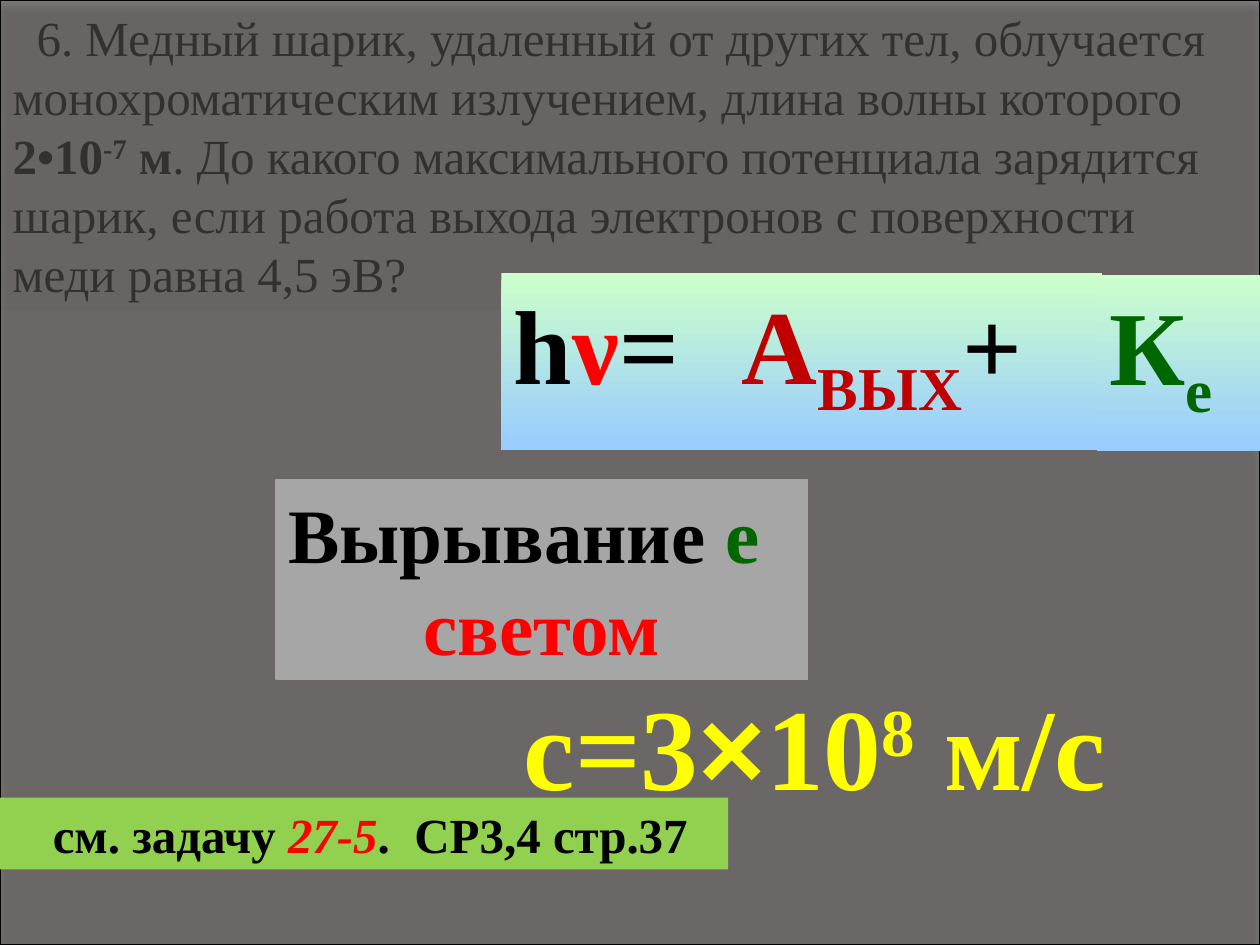
from dataclasses import dataclass

from pptx import Presentation
from pptx import util as u
from pptx.dml.color import RGBColor
from pptx.enum import shapes, text
from pptx.oxml import parse_xml
from pptx.oxml.ns import nsdecls, qn
from lxml import etree

COLORS = {
    "black": "000000", "red": "FF0000", "dark_red": "C00000",
    "green": "006600", "yellow": "FFFF00", "problem": "F2F2F2",
    "veil": "404040", "shadow": "4E3B30", "gray": "A6A6A6",
    "lime": "92D050", "mint": "CCFFCC", "sky": "99CCFF",
}
FONT = "Times New Roman"
LEFT, CENTER = text.PP_ALIGN.LEFT, text.PP_ALIGN.CENTER
TOP, MIDDLE = text.MSO_ANCHOR.TOP, text.MSO_ANCHOR.MIDDLE


@dataclass
class Span:
    words: str
    color: str = "black"
    baseline: int = 0
    bold: bool | None = None
    italic: bool | None = None
    font: str | None = None


@dataclass
class Line:
    spans: list[Span]
    size: int
    align: text.PP_ALIGN = LEFT
    bold: bool = True
    space_after: int = 0
    indent: float = 0


@dataclass
class Panel:
    left: float
    top: float
    width: float
    height: float
    lines: list[Line]
    fill: str | tuple[str, str] | None = None
    border: str | None = None
    anchor: text.MSO_ANCHOR = TOP


def rgb(name: str) -> RGBColor:
    return RGBColor.from_string(COLORS[name])


def place(shape, left: float, top: float, width: float, height: float) -> None:
    shape.left, shape.top = u.Inches(left), u.Inches(top)
    shape.width, shape.height = u.Inches(width), u.Inches(height)


def paint(shape, fill: str | tuple[str, str]) -> None:
    """Fill with one colour, or with a top-to-bottom gradient of two."""
    if isinstance(fill, str):
        shape.fill.solid()
        shape.fill.fore_color.rgb = rgb(fill)
        return
    shape.fill.gradient()
    shape.fill.gradient_angle = 270
    for stop, name in zip(shape.fill.gradient_stops, fill):
        stop.color.rgb = rgb(name)


def write(shape, lines: list[Line], anchor: text.MSO_ANCHOR) -> None:
    frame = shape.text_frame
    frame.word_wrap = True
    frame.vertical_anchor = anchor
    for number, line in enumerate(lines):
        para = frame.add_paragraph() if number else frame.paragraphs[0]
        para.alignment = line.align
        para.space_after = u.Pt(line.space_after)
        para.font.name, para.font.size = FONT, u.Pt(line.size)
        para.font.bold = line.bold
        if line.indent:
            para._p.get_or_add_pPr().set("indent", str(u.Inches(line.indent)))
        for span in line.spans:
            run = para.add_run()
            run.text = span.words
            run.font.color.rgb = rgb(span.color)
            run.font.bold, run.font.italic = span.bold, span.italic
            if span.font:
                run.font.name = span.font
            if span.baseline:
                run._r.get_or_add_rPr().set("baseline", str(span.baseline * 1000))


def add_panel(page, panel: Panel) -> None:
    area = [u.Inches(n) for n in (panel.left, panel.top, panel.width, panel.height)]
    if panel.fill is None:
        box = page.shapes.add_textbox(*area)
    else:
        box = page.shapes.add_shape(shapes.MSO_SHAPE.RECTANGLE, *area)
        box.shadow.inherit = False
        paint(box, panel.fill)
        if panel.border:
            box.line.color.rgb = rgb(panel.border)
            box.line.width = u.Pt(0.75)
        else:
            box.line.fill.background()
    write(box, panel.lines, panel.anchor)


def add_veil(page, width: int, height: int) -> None:
    """Cover the slide with a translucent dark sheet that casts a soft shadow."""
    veil = page.shapes.add_shape(shapes.MSO_SHAPE.RECTANGLE, 0, 0, width, height)
    paint(veil, "veil")
    tint = veil._element.spPr.find(qn("a:solidFill"))[0]
    etree.SubElement(tint, qn("a:alpha")).set("val", "65000")
    veil.line.color.rgb = rgb("black")
    veil.line.width = u.Pt(0.79)
    veil.shadow.inherit = False
    veil._element.spPr.find(qn("a:effectLst")).append(parse_xml(
        f'<a:outerShdw {nsdecls("a")} blurRad="{u.Pt(6)}" dist="{u.Pt(4)}" '
        f'dir="5400000" rotWithShape="0"><a:srgbClr val="{COLORS["shadow"]}">'
        '<a:alpha val="60000"/></a:srgbClr></a:outerShdw>'))


def formula_part(left: float, top: float, width: float, *spans: Span) -> Panel:
    line = Line(list(spans), 60, space_after=10)
    return Panel(left, top, width, 1.4, [line], ("mint", "sky"))


PROBLEM = Line([
    Span("6. Медный шарик, удаленный от других тел, облучается "
         "монохроматическим излучением, длина волны которого "),
    Span("2•10", bold=True),
    Span("-7", baseline=30, bold=True),
    Span(" м", bold=True),
    Span(". До какого максимального потенциала зарядится шарик, если работа "
         "выхода электронов с поверхности меди равна 4,5 эВ?"),
], 28, bold=False, indent=0.19)

PANELS = [
    Panel(4.06, 5.31, 5.94, 1.21, [Line([
        Span("c=3", "yellow"), Span("×", "yellow", font="Arial"),
        Span("10", "yellow"), Span("8", "yellow", 30), Span(" м/с", "yellow"),
    ], 66)]),
    Panel(2.19, 3.81, 4.22, 1.58, [
        Line([Span("Вырывание "), Span("е", "green")], 44),
        Line([Span("светом", "red")], 44, CENTER),
    ], "gray", "gray"),
    formula_part(3.98, 2.17, 2.06, Span("h"), Span("ν", "red"), Span("=")),
    formula_part(5.79, 2.17, 2.96, Span("А", "dark_red"),
                 Span("ВЫХ", "dark_red", -25), Span("+")),
    formula_part(8.71, 2.18, 1.29, Span("К", "green"), Span("е", "green", -25)),
    Panel(0, 6.33, 5.78, 0.57, [Line([
        Span(" см. задачу "), Span("27-5", "red", italic=True),
        Span(".  СР3,4 стр.37"),
    ], 28, CENTER)], "lime", anchor=MIDDLE),
]


def main() -> None:
    deck = Presentation()
    deck.slide_width, deck.slide_height = u.Inches(10), u.Inches(7.5)
    page = deck.slides.add_slide(deck.slide_layouts[5])
    title = page.shapes.title
    place(title, 0, 0, 10, 2.46)
    paint(title, "problem")
    write(title, [PROBLEM], MIDDLE)
    title.text_frame.auto_size = text.MSO_AUTO_SIZE.NONE
    add_veil(page, deck.slide_width, deck.slide_height)
    for panel in PANELS:
        add_panel(page, panel)
    deck.save("out.pptx")


if __name__ == "__main__":
    main()
